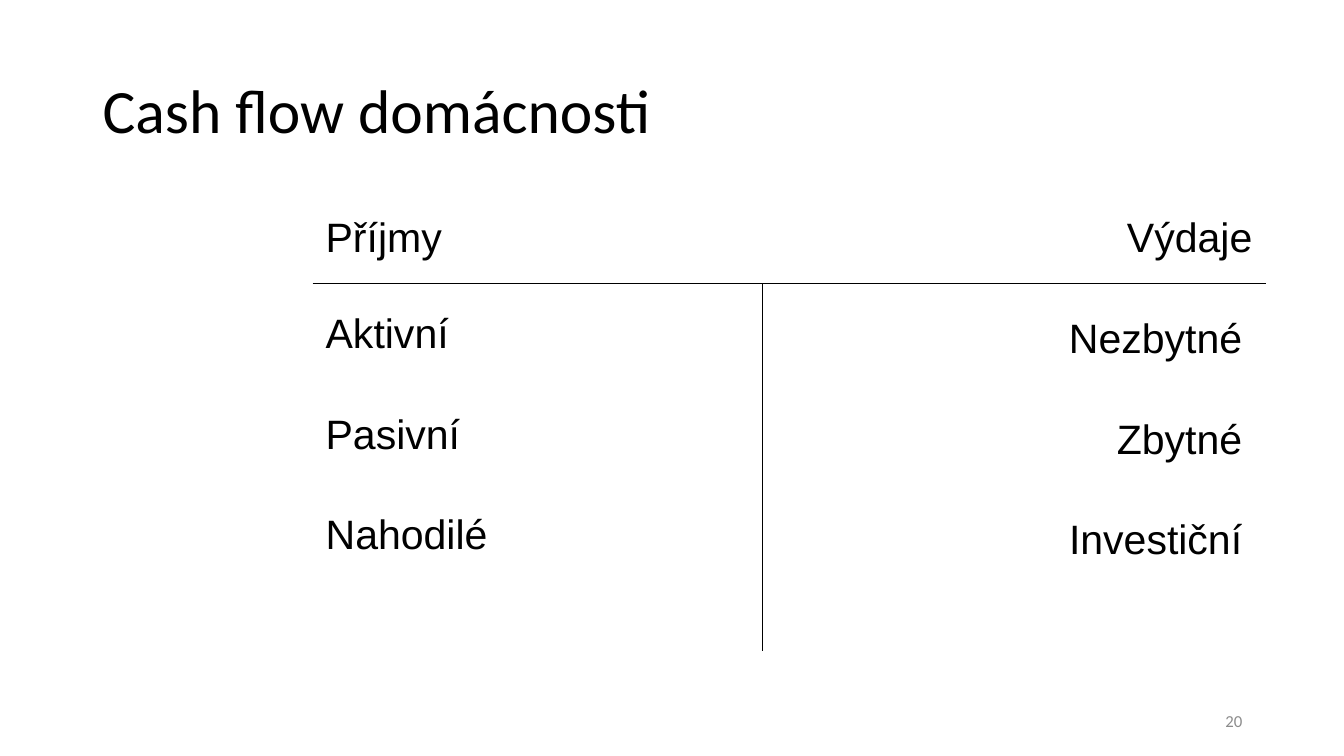
from pptx import Presentation
from pptx.dml.color import RGBColor
from pptx.enum.shapes import MSO_CONNECTOR
from pptx.enum.text import MSO_ANCHOR, PP_ALIGN
from pptx.oxml.ns import qn
from pptx.util import Inches, Pt
from lxml.etree import SubElement

# Content
TITLE = "Cash flow domácnosti"
PAGE_NUMBER = "20"
# (alignment, heading, heading box, entries, entries box); boxes: left, top, width, height
SIDES = [
    (PP_ALIGN.JUSTIFY, "Příjmy", (3.1, 2.03, 3.25, 0.55),
     ["Aktivní", "Pasivní", "Nahodilé"], (3.1, 2.98, 4.22, 3.18)),
    (PP_ALIGN.RIGHT, "Výdaje", (10.66, 2.03, 1.89, 0.67),
     ["Nezbytné", "Zbytné", "Investiční"], (8.14, 3.03, 4.31, 3.18)),
]
# Bars of the T account: x1, y1, x2, y2
ACCOUNT_BARS = [(3.1, 2.81, 12.56, 2.81), (7.56, 2.81, 7.56, 6.46)]

THEME = {
    "ink": RGBColor(0, 0, 0), "muted": RGBColor(0x8C, 0x8C, 0x8C),
    "heading_font": "Calibri", "body_font": "Arial",
    "title_size": 44, "body_size": 29.3, "number_size": 12,
    "entry_gap": 36.7, "bar_width": 0.75,
}

prs = Presentation()
prs.slide_width, prs.slide_height = Inches(13.33), Inches(7.5)
slide = prs.slides.add_slide(prs.slide_layouts[6])


def add_text(box, lines, size, font, color, align=PP_ALIGN.LEFT,
             anchor=MSO_ANCHOR.TOP, insets=(0.1, 0.05), spacing=None):
    frame = slide.shapes.add_textbox(*map(Inches, box)).text_frame
    frame.word_wrap = True
    frame.vertical_anchor = anchor
    frame.margin_left = frame.margin_right = Inches(insets[0])
    frame.margin_top = frame.margin_bottom = Inches(insets[1])
    frame.text = "\n".join(lines)
    for index, paragraph in enumerate(frame.paragraphs):
        paragraph.alignment = align
        if spacing:
            paragraph.line_spacing = spacing
        if index:
            paragraph.space_before = Pt(THEME["entry_gap"])
        for run in paragraph.runs:
            run.font.size = Pt(size)
            run.font.name = font
            run.font.color.rgb = color


# Title and page number
add_text((0.92, 0.4, 11.5, 1.45), [TITLE], THEME["title_size"],
         THEME["heading_font"], THEME["ink"],
         anchor=MSO_ANCHOR.MIDDLE, spacing=0.9)
add_text((9.42, 6.95, 3, 0.4), [PAGE_NUMBER], THEME["number_size"],
         THEME["heading_font"], THEME["muted"],
         align=PP_ALIGN.RIGHT, anchor=MSO_ANCHOR.MIDDLE)

# T account
for ends in ACCOUNT_BARS:
    bar = slide.shapes.add_connector(MSO_CONNECTOR.STRAIGHT, *map(Inches, ends))
    bar.line.color.rgb = THEME["ink"]
    bar.line.width = Pt(THEME["bar_width"])
    SubElement(bar.element.spPr, qn("a:effectLst"))

# Income and expenses
for align, heading, heading_box, entries, entries_box in SIDES:
    for box, lines in ((heading_box, [heading]), (entries_box, entries)):
        add_text(box, lines, THEME["body_size"], THEME["body_font"],
                 THEME["ink"], align=align, insets=(0.13, 0.07))

prs.save("out.pptx")
